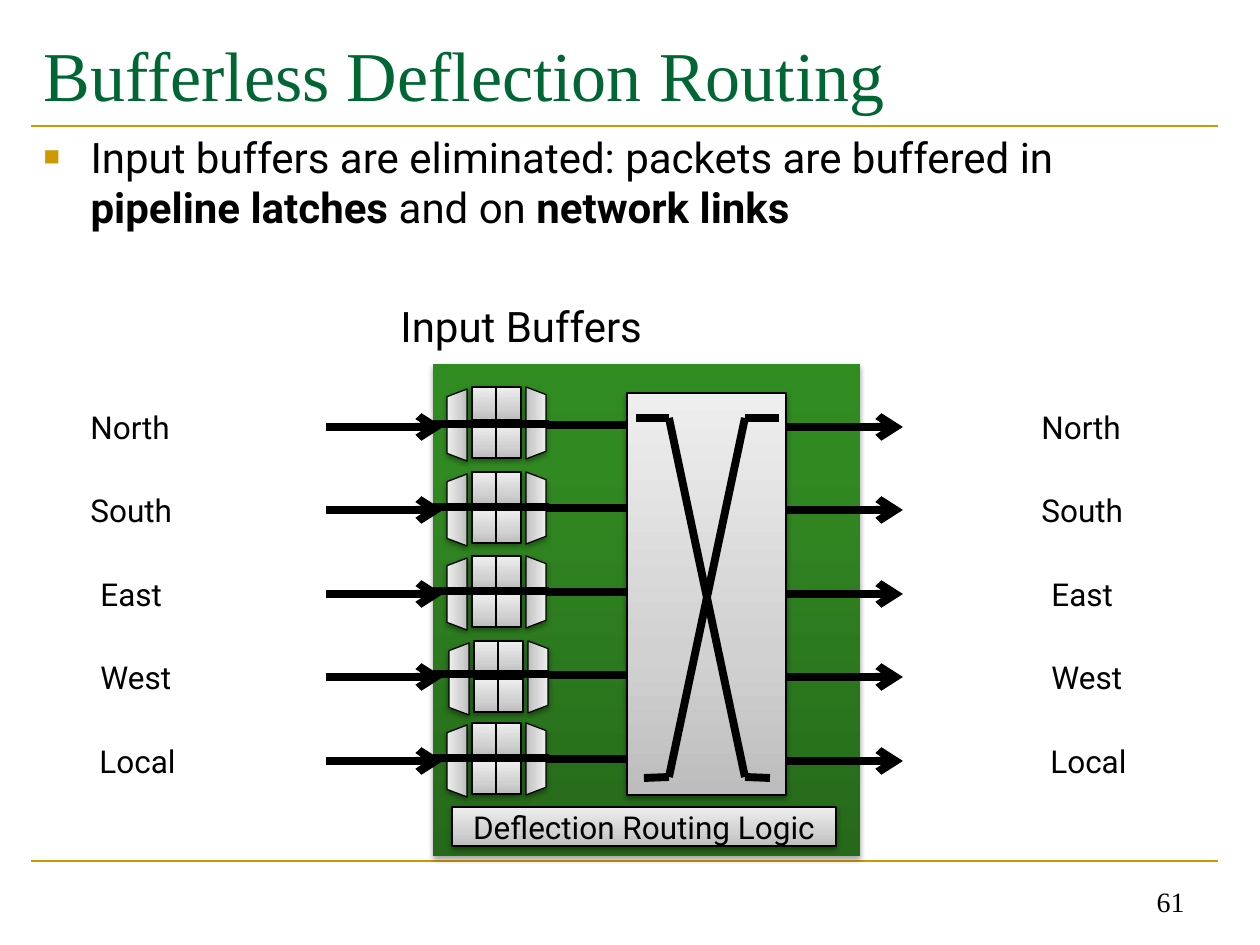
"""Builds a slide on bufferless deflection routing with a router diagram."""
import lxml.etree
import pptx
import pptx.dml.color
import pptx.enum.shapes
import pptx.enum.text
import pptx.oxml.ns
import pptx.util

PX = 914400 // 126
GOLD, BLACK = "CC9900", "000000"
SILVER = [(0, "BDBDBD"), (35, "D1D1D1"), (100, "EEEEEE")]
GREEN = [(0, "26691A"), (80, "318922"), (100, "308C20")]
PORTS = ["North", "South", "East", "West", "Local"]
PORT_YS = [427 + 167 * i // 2 for i in range(len(PORTS))]
SHAPES = pptx.enum.shapes.MSO_SHAPE
ANCHOR = pptx.enum.text.MSO_ANCHOR
ALIGN = pptx.enum.text.PP_ALIGN
qn = pptx.oxml.ns.qn
colour = pptx.dml.color.RGBColor.from_string

deck = pptx.Presentation()
deck.slide_width, deck.slide_height = 1260 * PX, 945 * PX
slide = deck.slides.add_slide(deck.slide_layouts[1])


def wire(x1, y1, x2, y2, width=4.5, ink=BLACK, arrow=False):
    line = slide.shapes.add_connector(
        pptx.enum.shapes.MSO_CONNECTOR.STRAIGHT, x1 * PX, y1 * PX, x2 * PX, y2 * PX)
    line.line.width = pptx.util.Pt(width)
    line.line.color.rgb = colour(ink)
    if arrow:
        lxml.etree.SubElement(line.line._get_or_add_ln(), qn("a:tailEnd"), type="arrow")
    lxml.etree.SubElement(line._element.spPr, qn("a:effectLst"))


def block(preset, left, top, width, height, stops=SILVER, opacity=38):
    shape = slide.shapes.add_shape(preset, left * PX, top * PX, width * PX, height * PX)
    shape.fill.gradient()
    shape.fill.gradient_angle = 90
    stop_list = shape._element.spPr.find(qn("a:gradFill")).find(qn("a:gsLst"))
    for stop in list(stop_list):
        stop_list.remove(stop)
    for position, ink in stops:
        stop = lxml.etree.SubElement(stop_list, qn("a:gs"), pos=str(position * 1000))
        lxml.etree.SubElement(stop, qn("a:srgbClr"), val=ink)
    shape.line.color.rgb = colour(BLACK)
    shape.line.width = pptx.util.Pt(0.75)
    shape.shadow.inherit = False
    shadow = lxml.etree.SubElement(
        shape._element.spPr.find(qn("a:effectLst")), qn("a:outerShdw"),
        blurRad="39000", dist="22000", dir="5400000", rotWithShape="0")
    shade = lxml.etree.SubElement(shadow, qn("a:srgbClr"), val=BLACK)
    lxml.etree.SubElement(shade, qn("a:alpha"), val=str(opacity * 1000))
    return shape


for rule_y in (861, 126):
    wire(31, rule_y, 1218, rule_y, 1.5, GOLD)

title, body = slide.placeholders
for holder, top, height, anchor in ((title, 21, 105, ANCHOR.MIDDLE), (body, 125, 180, ANCHOR.TOP)):
    holder.left, holder.top, holder.width, holder.height = 31 * PX, top * PX, 1187 * PX, height * PX
    holder.text_frame.auto_size = pptx.enum.text.MSO_AUTO_SIZE.NONE
    holder.text_frame.vertical_anchor = anchor

title.text_frame.text = "Bufferless Deflection Routing"
heading = title.text_frame.paragraphs[0]
heading.alignment = ALIGN.LEFT
heading.font.size = pptx.util.Pt(40)
heading.font.name = "Times New Roman"
heading.font.color.rgb = colour("006633")

statement = body.text_frame.paragraphs[0]
statement.text = "Input buffers are eliminated: packets are buffered in\vpipeline latches"
for words in (" and on ", "network links"):
    statement.add_run().text = words
for run, bold in zip(statement.runs, (False, True, False, True)):
    run.font.size = pptx.util.Pt(24)
    run.font.name = "Roboto"
    run.font.bold = bold
    run.font.color.rgb = colour(BLACK)
bullet = statement._p.get_or_add_pPr()
bullet.set("marL", str(47 * PX))
bullet.set("indent", str(-47 * PX))
bullet_ink = lxml.etree.SubElement(bullet, qn("a:buClr"))
lxml.etree.SubElement(bullet_ink, qn("a:srgbClr"), val=GOLD)
lxml.etree.SubElement(bullet, qn("a:buSzPct"), val="65000")
lxml.etree.SubElement(bullet, qn("a:buFont"), typeface="Arial")
lxml.etree.SubElement(bullet, qn("a:buChar"), char="■")

router = block(SHAPES.RECTANGLE, 433, 364, 427, 492, GREEN, 35)
router.line.fill.background()
for y in PORT_YS:
    wire(326, y, 443, y, arrow=True)
    wire(540, y - 2, 627, y - 2)

block(SHAPES.RECTANGLE, 627, 393, 159, 402)
for crossing in ([(636, 418), (669, 418), (745, 777), (770, 778)],
                 [(779, 418), (745, 418), (669, 777), (644, 778)]):
    for start, end in zip(crossing, crossing[1:]):
        wire(*start, *end)
for y in PORT_YS:
    wire(786, y, 903, y, arrow=True)

for left, top in zip((472, 472, 472, 474, 472), (387, 472, 556, 641, 723)):
    for slot_top in (top, top + 38):
        block(SHAPES.RECTANGLE, left, slot_top, 49, 33)
        wire(left + 24, slot_top, left + 24, slot_top + 33, 0.75)
    for dx, dy, turn in ((28, 26, 90), (-51, 28, 270)):
        funnel = block(SHAPES.TRAPEZOID, left + dx, top + dy, 72, 20)
        funnel.adjustments[0] = 0.38
        funnel.rotation = turn
for y in PORT_YS:
    wire(433, y - 3, 549, y - 3)

logic = block(SHAPES.RECTANGLE, 452, 807, 384, 39)
logic.text_frame.text = "Deflection Routing Logic"
logic.text_frame.vertical_anchor = ANCHOR.MIDDLE
caption = logic.text_frame.paragraphs[0]
caption.alignment = ALIGN.CENTER
caption.font.size = pptx.util.Pt(18)
caption.font.name = "Roboto"
caption.font.color.rgb = colour(BLACK)

labels = [("Input Buffers", 388, 294, 271, 64, 24, "Roboto"),
          ("61", 903, 861, 294, 63, 16, "Times New Roman")]
for port, left, y in zip(PORTS, (78, 78, 88, 88, 87), PORT_YS):
    for side in (0, 951):
        labels.append((port, left + side, y - 25, 122, 50, 18, "Roboto"))
for words, left, top, width, height, size, face in labels:
    label = slide.shapes.add_textbox(left * PX, top * PX, width * PX, height * PX)
    label.text_frame.text = words
    label.text_frame.word_wrap = True
    line = label.text_frame.paragraphs[0]
    line.font.size = pptx.util.Pt(size)
    line.font.name = face
    line.font.color.rgb = colour(BLACK)
    if words == "61":
        line.alignment = ALIGN.RIGHT
        label.text_frame.vertical_anchor = ANCHOR.BOTTOM

deck.save("out.pptx")
